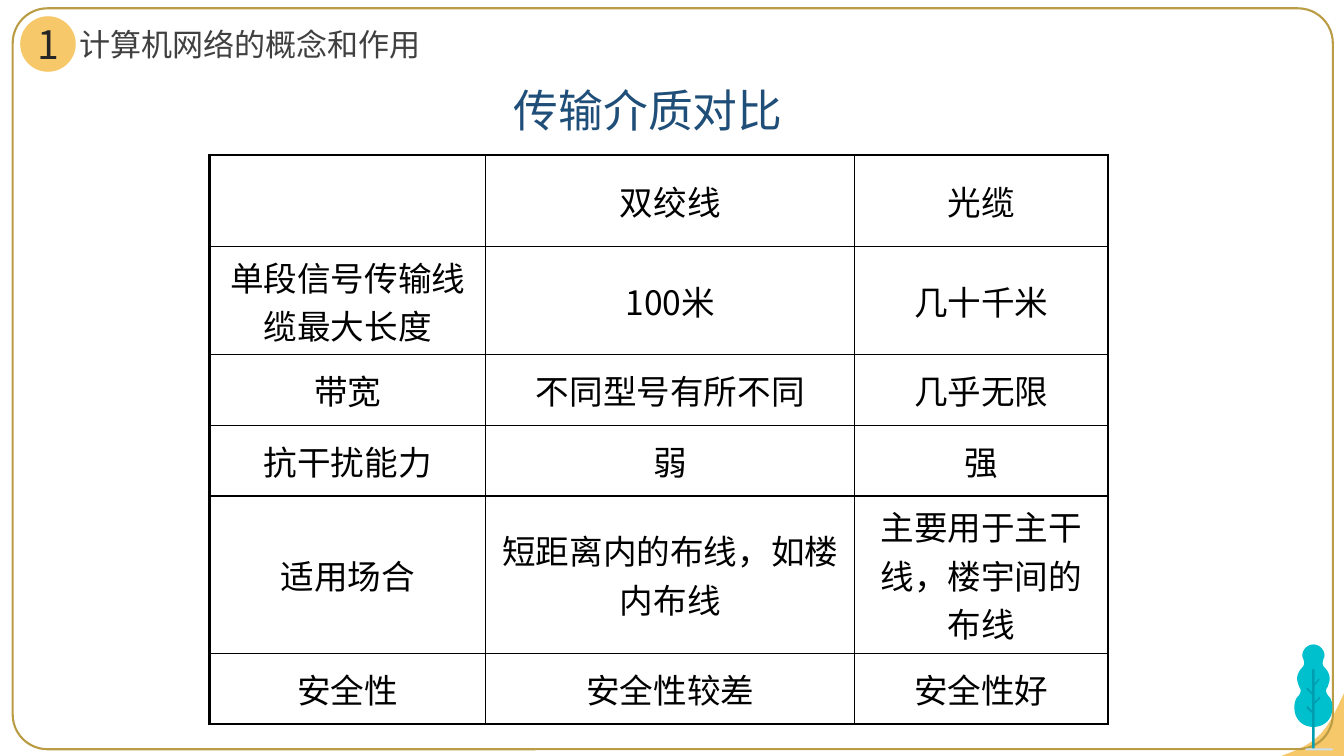
from dataclasses import dataclass

from lxml import etree
from pptx import Presentation
from pptx import util as u
from pptx.dml.color import RGBColor
from pptx.enum import shapes, text
from pptx.oxml import ns


@dataclass(frozen=True)
class Theme:
    """Colours, fonts and type sizes of the slide."""
    gold: str = "F7C869"
    frame: str = "BA9C45"
    leaf: str = "00C0CD"
    trunk: str = "009DB0"
    ground: str = "CADFEF"
    number: str = "262626"
    section: str = "404040"
    title: str = "1F4E79"
    black: str = "000000"
    font: str = "Noto Sans CJK SC"
    table_font: str = "Noto Sans CJK JP"
    number_size: float = 28
    section_size: float = 22.2
    title_size: float = 32
    table_size: float = 24
    frame_width: float = 1.5
    outer_border: float = 2
    inner_border: float = 1


THEME = Theme()
CENTRED = {"word_wrap": True, "vertical_anchor": text.MSO_ANCHOR.MIDDLE}
NO_MARGINS = dict.fromkeys(("margin_left", "margin_right", "margin_top", "margin_bottom"), 0)

COLUMN_WIDTHS = (6.96, 9.3, 6.38)
ROW_HEIGHTS = (2.31, 2.72, 1.78, 1.78, 3.96, 1.78)
COMPARISON = (
    ("", "双绞线", "光缆"),
    ("单段信号传输线缆最大长度", "100米", "几十千米"),
    ("带宽", "不同型号有所不同", "几乎无限"),
    ("抗干扰能力", "弱", "强"),
    ("适用场合", "短距离内的布线，如楼内布线", "主要用于主干线，楼宇间的布线"),
    ("安全性", "安全性较差", "安全性好"),
)

CROWN_CURVES = (
    (0.15, 0, 0.28, 0.13, 0.28, 0.28),
    (0.28, 0.33, 0.25, 0.36, 0.25, 0.38),
    (0.25, 0.38, 0.2, 0.51, 0.28, 0.58),
    (0.36, 0.66, 0.41, 0.76, 0.41, 0.86),
    (0.41, 0.94, 0.38, 0.99, 0.36, 1.07),
    (0.33, 1.09, 0.28, 1.19, 0.38, 1.3),
    (0.46, 1.37, 0.48, 1.5, 0.48, 1.6),
    (0.48, 1.88, 0.28, 2.08, 0, 2.08),
)
TRUNK = (
    (-0.15, 1.55), (-0.03, 1.68), (-0.03, 1.27), (-0.18, 1.12), (-0.15, 1.09),
    (-0.03, 1.22), (-0.03, 0.64), (0, 0.61), (0.03, 0.64), (0.03, 0.99),
    (0.13, 0.86), (0.15, 0.89), (0.03, 1.04), (0.03, 1.45), (0.15, 1.32),
    (0.18, 1.35), (0.03, 1.5), (0.03, 2.62), (0, 2.64), (-0.03, 2.62),
    (-0.03, 1.73), (-0.18, 1.6),
)


def apply_format(target, values):
    """Set each named attribute on the target."""
    for name, value in values.items():
        setattr(target, name, value)


def write(frame, content, size, colour, font=THEME.font, alignment=text.PP_ALIGN.CENTER):
    """Write one formatted paragraph and return it."""
    paragraph = frame.paragraphs[0]
    paragraph.alignment = alignment
    run = paragraph.add_run()
    run.text = content
    apply_format(run.font, {"name": font, "size": u.Pt(size), "bold": False})
    run.font.color.rgb = RGBColor.from_string(colour)
    east_asian = etree.SubElement(run.font._element, ns.qn("a:ea"))
    east_asian.set("typeface", font)
    return paragraph


def paint(shape, colour):
    """Give a shape a flat fill with no line or shadow."""
    shape.shadow.inherit = False
    shape.fill.solid()
    shape.fill.fore_color.rgb = RGBColor.from_string(colour)
    shape.line.fill.background()


def curve_points(start, curves, steps=8):
    """Return points along a chain of cubic curves."""
    points = [start]
    for x1, y1, x2, y2, x3, y3 in curves:
        x0, y0 = points[-1]
        for step in range(1, steps + 1):
            t = step / steps
            weights = ((1 - t) ** 3, 3 * t * (1 - t) ** 2, 3 * t * t * (1 - t), t ** 3)
            points.append(tuple(
                sum(weight * value for weight, value in zip(weights, values))
                for values in ((x0, x1, x2, x3), (y0, y1, y2, y3))))
    return points


def add_outline(parent, left, top, points, colour):
    """Draw a closed outline with points offset from left and top."""
    vertices = [(u.Cm(left + x), u.Cm(top + y)) for x, y in points]
    builder = parent.build_freeform(*vertices[0], scale=1.0)
    builder.add_line_segments(vertices[1:], close=True)
    paint(builder.convert_to_shape(), colour)


def add_corner(slide, left, top, side):
    """Draw the gold wedge in a square corner box."""
    curve = ((0.72 * side, 0.61 * side, 0.63 * side, 0.78 * side, 0, side),)
    points = curve_points((side, 0), curve) + [(side, side)]
    add_outline(slide.shapes, left, top, points, THEME.gold)


def add_frame(slide, left, top, width, height):
    """Draw the rounded frame around the slide."""
    frame = slide.shapes.add_shape(shapes.MSO_SHAPE.ROUNDED_RECTANGLE,
                                   *map(u.Cm, (left, top, width, height)))
    frame.adjustments[0] = 0.047
    frame.shadow.inherit = False
    frame.fill.background()
    frame.line.color.rgb = RGBColor.from_string(THEME.frame)
    frame.line.width = u.Pt(THEME.frame_width)


def add_tree(slide, axis, top):
    """Draw a tree around a vertical axis, starting at the top."""
    tree = slide.shapes.add_group_shape().shapes
    right_side = curve_points((0, 0), CROWN_CURVES)
    left_side = [(-x, y) for x, y in reversed(right_side[1:-1])]
    add_outline(tree, axis, top, right_side + left_side, THEME.leaf)
    add_outline(tree, axis, top, TRUNK, THEME.trunk)
    ground = tree.add_shape(shapes.MSO_SHAPE.ROUNDED_RECTANGLE, u.Cm(axis - 0.2),
                            u.Cm(top + 2.62), u.Cm(0.69), u.Cm(0.05))
    ground.adjustments[0] = 0.5
    paint(ground, THEME.ground)


def add_section_heading(slide, left, top, width, height):
    """Place the numbered disc and the section name beside it."""
    disc = slide.shapes.add_shape(shapes.MSO_SHAPE.OVAL,
                                  *map(u.Cm, (left, top, height, height)))
    paint(disc, THEME.gold)
    apply_format(disc.text_frame, {**CENTRED, **NO_MARGINS})
    write(disc.text_frame, "1", THEME.number_size, THEME.number)
    name_left = left + 0.99
    name = slide.shapes.add_textbox(
        *map(u.Cm, (name_left, top, left + width - name_left, height)))
    apply_format(name.text_frame, CENTRED)
    write(name.text_frame, "计算机网络的概念和作用", THEME.section_size, THEME.section)


def add_title(slide, left, top, width, height):
    """Move and format the title placeholder."""
    title = slide.shapes.title
    apply_format(title, {"left": u.Cm(left), "top": u.Cm(top),
                         "width": u.Cm(width), "height": u.Cm(height)})
    apply_format(title.text_frame, {"word_wrap": True, "auto_size": text.MSO_AUTO_SIZE.NONE,
                                    "vertical_anchor": text.MSO_ANCHOR.TOP})
    paragraph = write(title.text_frame, "传输介质对比", THEME.title_size, THEME.title,
                      alignment=text.PP_ALIGN.LEFT)
    paragraph.line_spacing = 0.9


def set_borders(cell, outer_sides):
    """Draw black cell borders, thicker on the outer sides."""
    properties = cell._tc.get_or_add_tcPr()
    for side in "LRTB":
        width = THEME.outer_border if side in outer_sides else THEME.inner_border
        line = etree.SubElement(properties, ns.qn(f"a:ln{side}"), w=str(u.Pt(width)))
        fill = etree.SubElement(line, ns.qn("a:solidFill"))
        etree.SubElement(fill, ns.qn("a:srgbClr"), val=THEME.black)


def add_comparison_table(slide, left, top):
    """Build the table comparing the two cable types."""
    rows, columns = len(ROW_HEIGHTS), len(COLUMN_WIDTHS)
    box = (left, top, sum(COLUMN_WIDTHS), sum(ROW_HEIGHTS))
    table = slide.shapes.add_table(rows, columns, *map(u.Cm, box)).table
    apply_format(table, {"first_row": False, "horz_banding": False})
    for column, width in zip(table.columns, COLUMN_WIDTHS):
        column.width = u.Cm(width)
    for r, (height, entries) in enumerate(zip(ROW_HEIGHTS, COMPARISON)):
        table.rows[r].height = u.Cm(height)
        for c, entry in enumerate(entries):
            cell = table.cell(r, c)
            edges = {"L": c == 0, "R": c == columns - 1, "T": r == 0, "B": r == rows - 1}
            set_borders(cell, [side for side, outer in edges.items() if outer])
            cell.fill.background()
            cell.vertical_anchor = text.MSO_ANCHOR.MIDDLE
            if entry:
                write(cell.text_frame, entry, THEME.table_size, THEME.black, THEME.table_font)


def main():
    """Build and save the slide."""
    presentation = Presentation()
    apply_format(presentation, {"slide_width": u.Cm(33.87), "slide_height": u.Cm(19.05)})
    slide = presentation.slides.add_slide(presentation.slide_layouts[5])
    add_corner(slide, 32.29, 17.47, 1.58)
    add_frame(slide, 0.32, 0.21, 33.27, 18.67)
    add_tree(slide, 33.1, 16.24)
    add_section_heading(slide, 0.51, 0.41, 10.59, 1.4)
    add_comparison_table(slide, 5.28, 3.91)
    add_title(slide, 12.69, 2.1, 8.66, 1.63)
    presentation.save("out.pptx")


if __name__ == "__main__":
    main()
